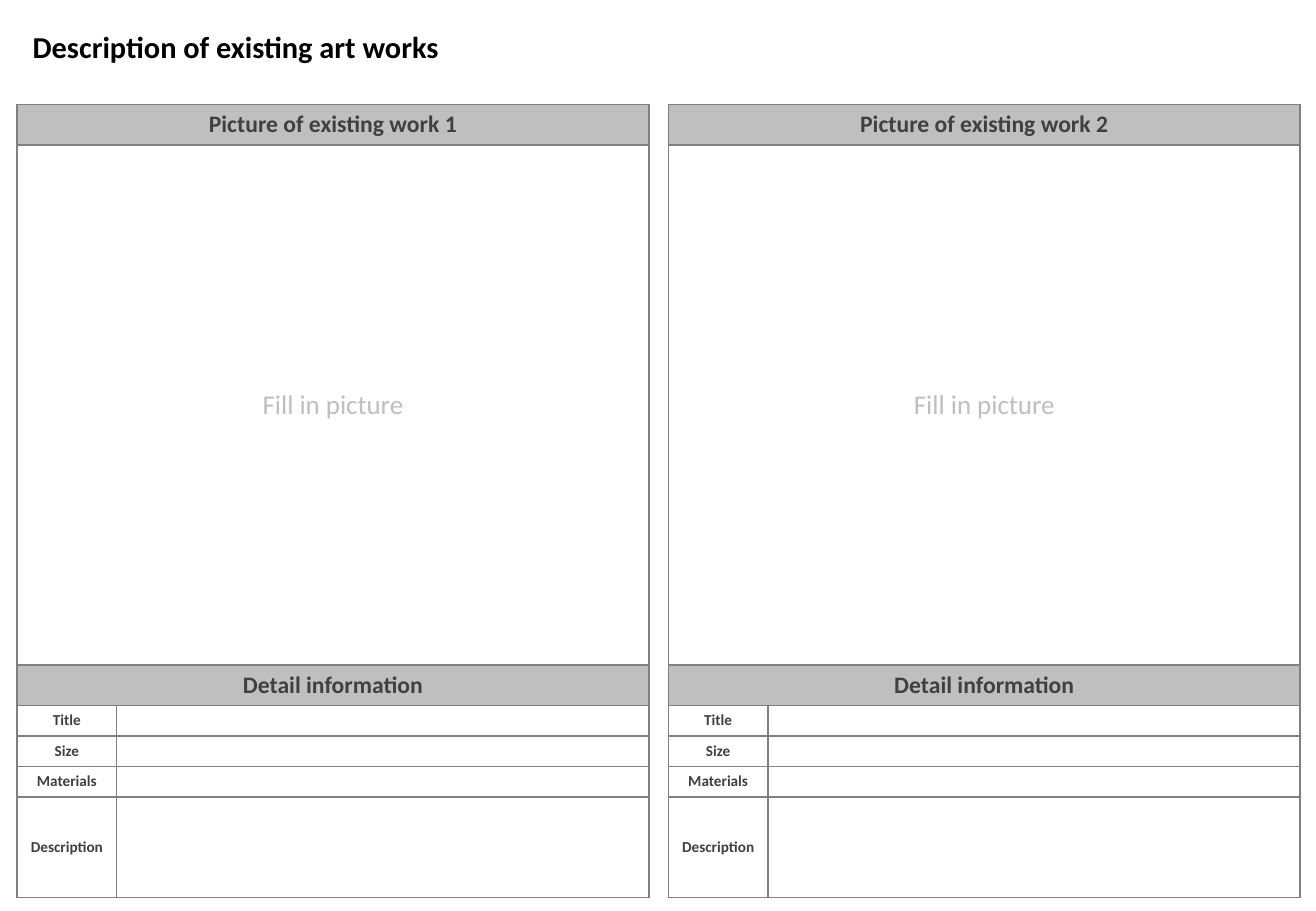
from dataclasses import dataclass

from lxml.etree import SubElement
from pptx import Presentation
from pptx.dml.color import RGBColor
from pptx.enum.text import MSO_ANCHOR, MSO_AUTO_SIZE, PP_ALIGN
from pptx.oxml.ns import qn
from pptx.util import Inches, Pt


@dataclass(frozen=True)
class Theme:
    font: str = "Calibri"
    black: str = "000000"
    dark: str = "404040"
    border: str = "808080"
    band: str = "BFBFBF"
    white: str = "FFFFFF"
    title_size: int = 18
    prompt_size: int = 16
    heading_size: int = 14
    label_size: int = 9
    border_width: int = 1


THEME = Theme()

# Table layout in inches
TABLE_LEFTS = (0.14, 5.5)
TABLE_TOP = 0.86
COLUMN_WIDTHS = (0.82, 4.38)
HEADING_HEIGHT, PICTURE_HEIGHT = 0.33, 4.28
DETAIL_HEIGHTS = {"Title": 0.25, "Size": 0.25, "Materials": 0.25, "Description": 0.83}

# Text formats
TITLE = {"size": Pt(THEME.title_size), "bold": True, "color": THEME.black}
HEADING = {"size": Pt(THEME.heading_size), "bold": True, "color": THEME.dark}
PROMPT = {"size": Pt(THEME.prompt_size), "bold": False, "color": THEME.band}
LABEL = {"size": Pt(THEME.label_size), "bold": True, "color": THEME.dark}


def write_text(paragraph, text, text_format):
    run = paragraph.add_run()
    run.text = text
    for name, value in {"name": THEME.font, **text_format}.items():
        if name == "color":
            run.font.color.rgb = RGBColor.from_string(value)
        else:
            setattr(run.font, name, value)


def add_title(slide, text):
    shape = slide.shapes.add_textbox(Inches(0.17), Inches(0.18), Inches(3.57), Inches(0.4))
    frame = shape.text_frame
    frame.word_wrap = False
    frame.auto_size = MSO_AUTO_SIZE.SHAPE_TO_FIT_TEXT
    write_text(frame.paragraphs[0], text, TITLE)


def style_cell(cell, fill):
    properties = cell._tc.get_or_add_tcPr()
    for side in ("a:lnL", "a:lnR", "a:lnT", "a:lnB"):
        line = SubElement(properties, qn(side), w=str(Pt(THEME.border_width)))
        SubElement(SubElement(line, qn("a:solidFill")), qn("a:srgbClr"), val=THEME.border)
    cell.fill.solid()
    cell.fill.fore_color.rgb = RGBColor.from_string(fill)
    cell.vertical_anchor = MSO_ANCHOR.MIDDLE


def fill_cell(cell, text, text_format):
    paragraph = cell.text_frame.paragraphs[0]
    paragraph.alignment = PP_ALIGN.CENTER
    write_text(paragraph, text, text_format)


def set_empty_size(cell, points):
    # An empty cell takes its line height from the paragraph end mark
    SubElement(cell.text_frame.paragraphs[0]._p, qn("a:endParaRPr"), sz=str(points * 100))


def add_work_table(slide, left, number):
    # Each row: text, format, fill, height, spans both columns
    rows = [
        (f"Picture of existing work {number}", HEADING, THEME.band, HEADING_HEIGHT, True),
        ("Fill in picture", PROMPT, THEME.white, PICTURE_HEIGHT, True),
        ("Detail information", HEADING, THEME.band, HEADING_HEIGHT, True),
    ]
    rows += [(label, LABEL, THEME.white, height, False)
             for label, height in DETAIL_HEIGHTS.items()]
    table = slide.shapes.add_table(
        len(rows), len(COLUMN_WIDTHS), Inches(left), Inches(TABLE_TOP),
        Inches(sum(COLUMN_WIDTHS)), Inches(sum(row[3] for row in rows))).table
    for column, width in zip(table.columns, COLUMN_WIDTHS):
        column.width = Inches(width)
    for index, (text, text_format, fill, height, spans) in enumerate(rows):
        table.rows[index].height = Inches(height)
        label_cell, value_cell = table.cell(index, 0), table.cell(index, 1)
        for cell in (label_cell, value_cell):
            style_cell(cell, fill)
        if spans:
            label_cell.merge(value_cell)
        fill_cell(label_cell, text, text_format)
        set_empty_size(value_cell, THEME.label_size)


def main():
    presentation = Presentation()
    presentation.slide_width = Inches(10.83)
    presentation.slide_height = Inches(7.5)
    slide = presentation.slides.add_slide(presentation.slide_layouts[6])

    add_title(slide, "Description of existing art works")
    for number, left in enumerate(TABLE_LEFTS, start=1):
        add_work_table(slide, left, number)

    presentation.save("out.pptx")


if __name__ == "__main__":
    main()
